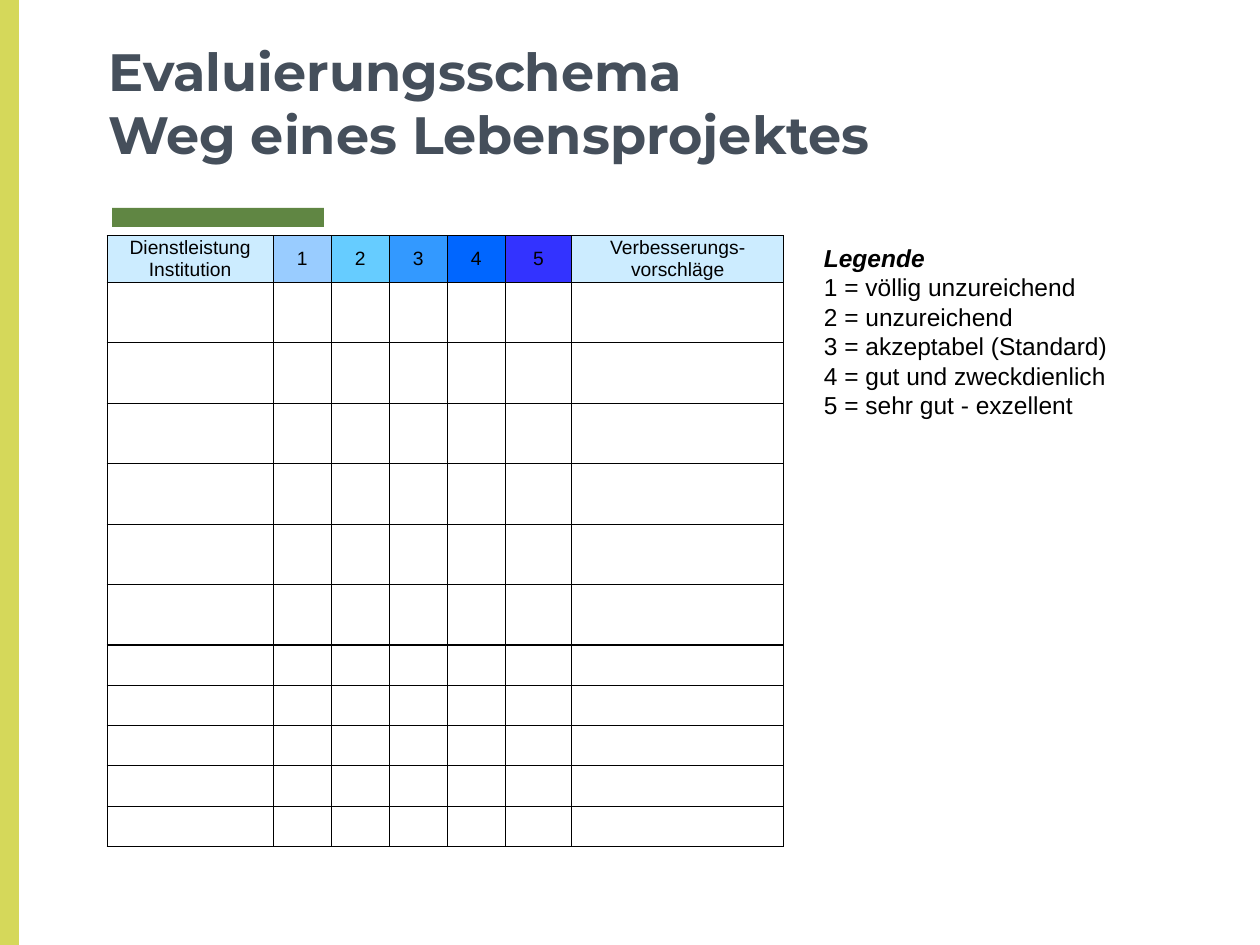
from dataclasses import dataclass
from lxml import etree
from pptx import Presentation
from pptx.dml.color import RGBColor
from pptx.enum.shapes import MSO_SHAPE
from pptx.enum.text import MSO_ANCHOR, PP_ALIGN
from pptx.oxml.ns import qn
from pptx.util import Inches, Pt

RECT = MSO_SHAPE.RECTANGLE
TOP, MIDDLE, BOTTOM = MSO_ANCHOR.TOP, MSO_ANCHOR.MIDDLE, MSO_ANCHOR.BOTTOM
CENTER = PP_ALIGN.CENTER
WIDE, HIGH = 10, 7.5


@dataclass(frozen=True)
class Theme:
    lime: str = "D5D85A"
    green: str = "608643"
    slate: str = "454F5B"
    black: str = "000000"
    pale: str = "CCECFF"
    scale: tuple = ("99CCFF", "66CCFF", "3399FF", "0066FF", "3333FF")
    head: str = "Montserrat"
    body: str = "Arial"
    title: int = 30
    legend: int = 14
    cell: int = 11
    rule: float = 0.75


THEME = Theme()

# Table grid in inches: label, five grades, remarks
COLS = [1.32] + [0.46] * 4 + [0.53, 1.68]
ROWS = [0.37] + [0.48] * 6 + [0.32] * 5
HEADS = [["Dienstleistung", "Institution"], *([str(n)] for n in range(1, 6)),
         ["Verbesserungs-vorschläge"]]
GRADES = ["völlig unzureichend", "unzureichend", "akzeptabel (Standard)",
          "gut und zweckdienlich", "sehr gut - exzellent"]


def add_bar(slide, box, color):
    bar = slide.shapes.add_shape(RECT, *map(Inches, box))
    bar.shadow.inherit = False
    bar.fill.solid()
    bar.fill.fore_color.rgb = RGBColor.from_string(color)
    bar.line.fill.background()


def add_run(para, text, face, size, color, bold=False, slant=False):
    run = para.add_run()
    run.text = text
    font = run.font
    font.name, font.size = face, Pt(size)
    font.bold, font.italic = bold, slant
    font.color.rgb = RGBColor.from_string(color)


def next_para(frame, index):
    return frame.add_paragraph() if index else frame.paragraphs[0]


def add_box(slide, box, anchor):
    frame = slide.shapes.add_textbox(*map(Inches, box)).text_frame
    frame.word_wrap = True
    frame.vertical_anchor = anchor
    return frame


def add_title(slide, lines):
    frame = add_box(slide, (0.76, 0, 8.49, 1.41), BOTTOM)
    frame.margin_top = frame.margin_bottom = Inches(0.1)
    para = frame.paragraphs[0]
    for index, line in enumerate(lines):
        if index:
            para.add_line_break()
        add_run(para, line, THEME.head, THEME.title, THEME.slate, bold=True)


def add_legend(slide):
    frame = add_box(slide, (6.44, 1.88, 2.71, 1.51), TOP)
    lines = ["Legende"] + [f"{n} = {word}" for n, word in enumerate(GRADES, 1)]
    for index, line in enumerate(lines):
        first = index == 0
        add_run(next_para(frame, index), line, THEME.body, THEME.legend,
                THEME.black, bold=first, slant=first)


def style_cell(cell, color=None):
    cell.vertical_anchor = MIDDLE
    cell.margin_left = cell.margin_right = Inches(0.06)
    cell.margin_top = cell.margin_bottom = 0
    # Borders must precede the fill
    props = cell._tc.get_or_add_tcPr()
    for side in ("lnL", "lnR", "lnT", "lnB"):
        line = etree.SubElement(props, qn(f"a:{side}"), w=str(Pt(THEME.rule)))
        fill = etree.SubElement(line, qn("a:solidFill"))
        etree.SubElement(fill, qn("a:srgbClr"), val=THEME.black)
    if color:
        cell.fill.solid()
        cell.fill.fore_color.rgb = RGBColor.from_string(color)
    else:
        cell.fill.background()


def fill_head(cell, lines):
    for index, line in enumerate(lines):
        para = next_para(cell.text_frame, index)
        para.alignment = CENTER
        add_run(para, line, THEME.body, THEME.cell, THEME.black)


def add_grid(slide):
    box = (0.85, 1.87, sum(COLS), sum(ROWS))
    table = slide.shapes.add_table(len(ROWS), len(COLS), *map(Inches, box)).table
    table.first_row = table.horz_banding = False
    for col, width in zip(table.columns, COLS):
        col.width = Inches(width)
    for row, height in zip(table.rows, ROWS):
        row.height = Inches(height)

    # Header row
    fills = [THEME.pale, *THEME.scale, THEME.pale]
    for index, (lines, color) in enumerate(zip(HEADS, fills)):
        cell = table.cell(0, index)
        style_cell(cell, color)
        fill_head(cell, lines)

    # Empty rows: a small type size keeps the set height
    for row in range(1, len(ROWS)):
        for col in range(len(COLS)):
            cell = table.cell(row, col)
            style_cell(cell)
            para = cell.text_frame.paragraphs[0]
            etree.SubElement(para._p, qn("a:endParaRPr"), sz=str(THEME.cell * 100))


def main():
    deck = Presentation()
    deck.slide_width, deck.slide_height = Inches(WIDE), Inches(HIGH)
    slide = deck.slides.add_slide(deck.slide_layouts[6])

    # Accent bars
    add_bar(slide, (0.89, 1.65, 1.68, 0.15), THEME.green)
    add_bar(slide, (0, 0, 0.15, HIGH), THEME.lime)

    # Content
    add_title(slide, ["Evaluierungsschema", "Weg eines Lebensprojektes"])
    add_grid(slide)
    add_legend(slide)
    deck.save("out.pptx")


if __name__ == "__main__":
    main()
